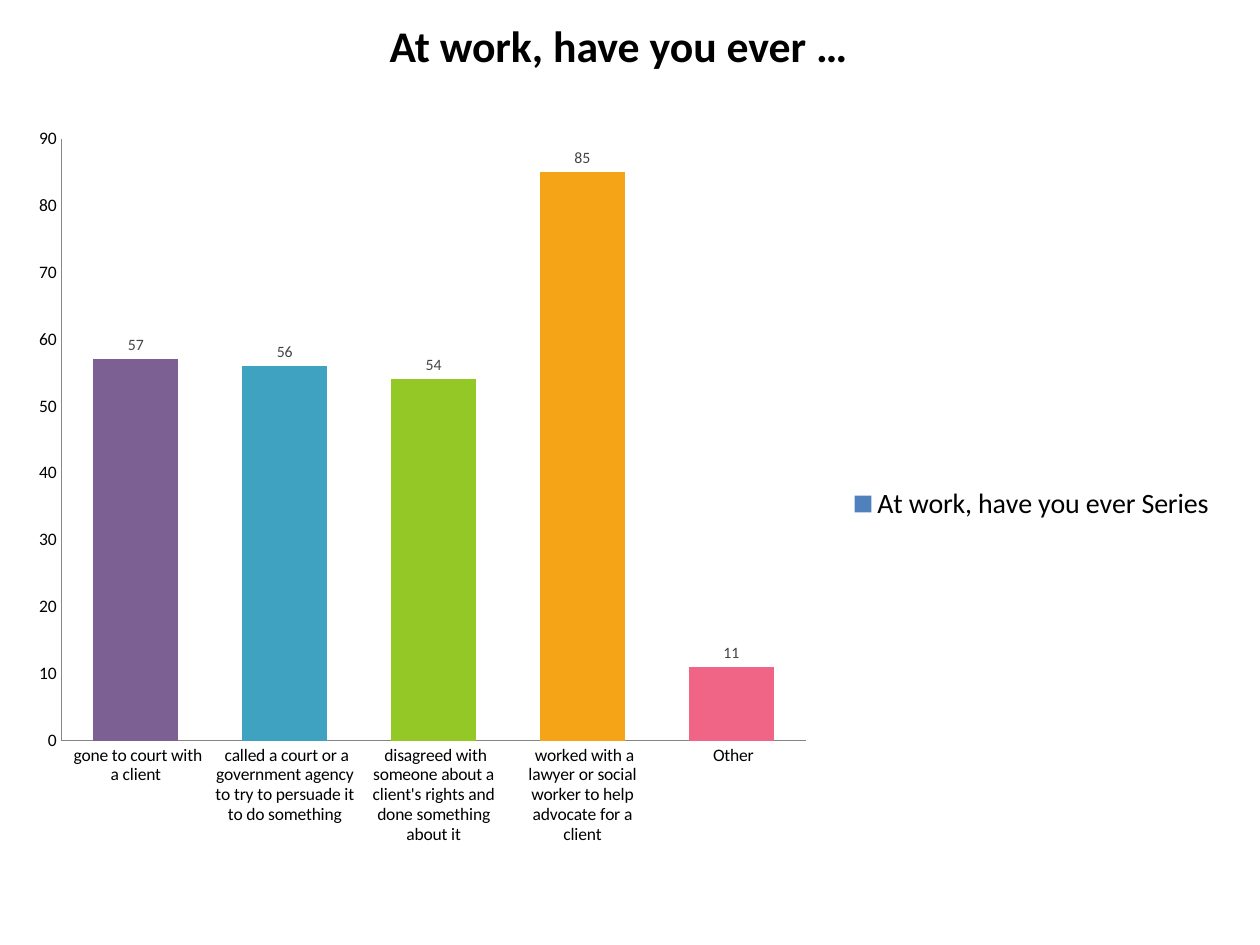
from dataclasses import dataclass

from lxml.etree import SubElement
from pptx import Presentation
from pptx.chart.data import CategoryChartData
from pptx.dml.color import RGBColor
from pptx.enum.chart import (XL_CHART_TYPE, XL_LABEL_POSITION,
                             XL_LEGEND_POSITION, XL_TICK_MARK)
from pptx.enum.text import PP_ALIGN
from pptx.oxml.ns import qn
from pptx.util import Pt


@dataclass(frozen=True)
class Theme:
    """Hold the font, type sizes and colours."""
    face: str = "Calibri"
    head: int = 25
    key: int = 16
    axis: int = 10
    label: int = 9
    ink: str = "000000"
    soft: str = "444444"
    rule: str = "868686"
    base: str = "4F81BD"


THEME = Theme()
NAME = "At work, have you ever Series"
ANSWERS = (
    (" gone to court with a client", 57, "7C6093"),
    (" called a court or a government agency to try to persuade it "
     "to do something", 56, "40A2C1"),
    (" disagreed with someone about a client's rights and done "
     "something about it", 54, "94C826"),
    (" worked with a lawyer or social worker to help advocate for "
     "a client", 85, "F5A417"),
    (" Other", 11, "F06586"),
)


def style(font, size, color=THEME.ink, bold=False):
    """Set face, size, colour and weight of a font."""
    font.name, font.size, font.bold = THEME.face, Pt(size), bold
    font.color.rgb = RGBColor.from_string(color)


def paint(fmt, color):
    """Fill a bar with one solid colour."""
    fmt.fill.solid()
    fmt.fill.fore_color.rgb = RGBColor.from_string(color)


def add_title(slide, box):
    """Place the centred heading in the box."""
    frame = slide.shapes.add_textbox(*map(Pt, box)).text_frame
    frame.word_wrap = True
    para = frame.paragraphs[0]
    para.text = "At work, have you ever … "
    para.alignment = PP_ALIGN.CENTER
    style(para.font, THEME.head, bold=True)


def set_plot(chart, area):
    """Fix the inner plot area as shares of the chart."""
    plot = chart.plots[0]._element.getparent()
    layout = plot.find(qn("c:layout"))
    if layout is None:
        layout = SubElement(plot, qn("c:layout"))
        plot.insert(0, layout)
    manual = SubElement(layout, qn("c:manualLayout"))
    parts = [("layoutTarget", "inner"), ("xMode", "edge"), ("yMode", "edge")]
    parts += zip("xywh", area)
    for tag, val in parts:
        SubElement(manual, qn(f"c:{tag}")).set("val", str(val))


def add_bars(slide, box):
    """Place the column chart of answers in the box."""
    names, counts, colors = zip(*ANSWERS)
    data = CategoryChartData()
    data.categories = names
    data.add_series(NAME, counts)
    chart = slide.shapes.add_chart(
        XL_CHART_TYPE.COLUMN_CLUSTERED, *map(Pt, box), data).chart
    chart.has_title = False
    style(chart.font, THEME.axis)
    set_plot(chart, (0.025, 0.054, 0.622, 0.735))

    for axis in (chart.category_axis, chart.value_axis):
        axis.has_major_gridlines = False
        axis.major_tick_mark = axis.minor_tick_mark = XL_TICK_MARK.NONE
        axis.format.line.color.rgb = RGBColor.from_string(THEME.rule)
        style(axis.tick_labels.font, THEME.axis)
    scale = chart.value_axis
    scale.minimum_scale, scale.maximum_scale, scale.major_unit = 0, 90, 10

    chart.has_legend = True
    legend = chart.legend
    legend.position = XL_LEGEND_POSITION.RIGHT
    legend.include_in_layout = False
    style(legend.font, THEME.key)

    plot = chart.plots[0]
    plot.gap_width, plot.vary_by_categories = 75, False
    series = plot.series[0]
    paint(series.format, THEME.base)
    for i, color in enumerate(colors):
        paint(series.points[i].format, color)
    labels = series.data_labels
    labels.show_value = True
    labels.position = XL_LABEL_POSITION.OUTSIDE_END
    style(labels.font, THEME.label, THEME.soft)


def main():
    """Build and save the slide."""
    deck = Presentation()
    deck.slide_width, deck.slide_height = Pt(720), Pt(540)
    slide = deck.slides.add_slide(deck.slide_layouts[6])
    add_title(slide, (7.2, 7.2, 698, 37.5))
    add_bars(slide, (18, 54, 684, 468))
    deck.save("out.pptx")


if __name__ == "__main__":
    main()
